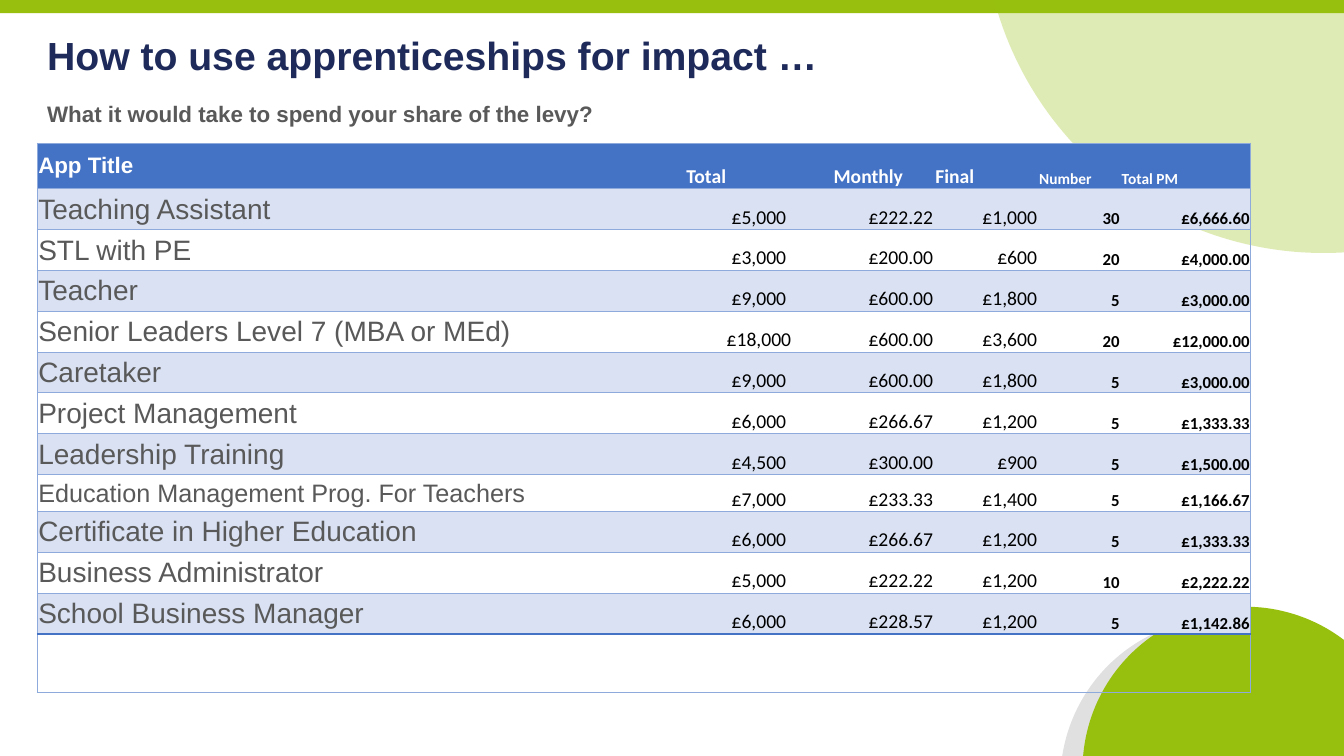
from dataclasses import dataclass
from typing import Optional

from lxml.etree import SubElement
from pptx import Presentation
from pptx.dml.color import RGBColor
from pptx.enum.shapes import MSO_SHAPE as Shape
from pptx.enum.text import MSO_ANCHOR as Anchor, PP_ALIGN as Align
from pptx.oxml.ns import qn
from pptx.util import Pt

LIME = RGBColor(0x97, 0xBF, 0x0D)
BAR_LIME = RGBColor(0x98, 0xBF, 0x0E)
NAVY = RGBColor(0x1E, 0x2A, 0x5A)
GREY = RGBColor(0x59, 0x59, 0x59)
BLUE = RGBColor(0x44, 0x72, 0xC4)
PALE_BLUE = RGBColor(0xD9, 0xE1, 0xF2)
RULE_BLUE = RGBColor(0x8E, 0xA9, 0xDB)
WHITE = RGBColor(0xFF, 0xFF, 0xFF)
BLACK = RGBColor(0, 0, 0)
NO_STYLE = "{2D5ABB26-0587-4C30-8999-92F81FD0307C}"


@dataclass
class Decoration:
    kind: Shape
    left: float
    top: float
    width: float
    height: float
    colour: RGBColor
    opacity: int = 100


@dataclass
class Heading:
    text: str
    top: float
    width: float
    height: float
    size: float
    colour: RGBColor


@dataclass
class CellStyle:
    size: float
    colour: RGBColor
    bold: bool = False
    font: str = "Calibri"
    align: Align = Align.LEFT
    anchor: Anchor = Anchor.BOTTOM


@dataclass
class Rule:
    colour: RGBColor
    width: float


THIN = Rule(RULE_BLUE, 0.5)
THICK = Rule(BLUE, 2)

CORNER_CIRCLES = [
    Decoration(Shape.OVAL, 757.4, 441.4, 232.6, 232.6, BLACK, 12),
    Decoration(Shape.OVAL, 773.3, 433.4, 232.6, 232.6, LIME),
]
TOP_SHAPES = [
    Decoration(Shape.RECTANGLE, 0, 0, 960, 9.4, BAR_LIME),
    Decoration(Shape.OVAL, 702, -306, 486.7, 486.7, LIME, 30),
]
HEADINGS = [
    Heading("How to use apprenticeships for impact …", 18.7, 585.4, 65.5, 28, NAVY),
    Heading("What it would take to spend your share of the levy?", 67.7, 519.8, 26.6, 16, GREY),
]

TITLES = ("App Title", "Total", "Monthly", "Final", "Number", "Total PM")
APPRENTICESHIPS = [
    ("Teaching Assistant", "£5,000", "£222.22", "£1,000", "30", "£6,666.60"),
    ("STL with PE", "£3,000", "£200.00", "£600", "20", "£4,000.00"),
    ("Teacher", "£9,000", "£600.00", "£1,800", "5", "£3,000.00"),
    ("Senior Leaders Level 7 (MBA or MEd)", "£18,000", "£600.00", "£3,600", "20", "£12,000.00"),
    ("Caretaker", "£9,000", "£600.00", "£1,800", "5", "£3,000.00"),
    ("Project Management", "£6,000", "£266.67", "£1,200", "5", "£1,333.33"),
    ("Leadership Training", "£4,500", "£300.00", "£900", "5", "£1,500.00"),
    ("Education Management Prog. For Teachers", "£7,000", "£233.33", "£1,400", "5", "£1,166.67"),
    ("Certificate in Higher Education", "£6,000", "£266.67", "£1,200", "5", "£1,333.33"),
    ("Business Administrator", "£5,000", "£222.22", "£1,200", "10", "£2,222.22"),
    ("School Business Manager", "£6,000", "£228.57", "£1,200", "5", "£1,142.86"),
]
LONG_ROW = 8
LAST_ROW = len(APPRENTICESHIPS)
COLUMN_WIDTHS = (463, 105.1, 72.7, 74.2, 59, 92.9)
ROW_HEIGHTS = [32.4] + [29.2] * LAST_ROW + [41.8]
ROW_HEIGHTS[LONG_ROW] = 26.2

TITLE_STYLES = (
    [CellStyle(16, WHITE, True, "Arial", anchor=Anchor.MIDDLE)]
    + [CellStyle(14, WHITE, True)] * 3
    + [CellStyle(11, WHITE, True)] * 2
)
BODY_STYLES = (
    [CellStyle(20, GREY, False, "Arial", anchor=Anchor.MIDDLE),
     CellStyle(14, BLACK, align=Align.CENTER)]
    + [CellStyle(14, BLACK, align=Align.RIGHT)] * 2
    + [CellStyle(12, BLACK, True, align=Align.RIGHT)] * 2
)
LONG_STYLES = [CellStyle(18, GREY, False, "Arial", anchor=Anchor.MIDDLE)] + BODY_STYLES[1:]


def draw_decoration(slide, item: Decoration) -> None:
    shape = slide.shapes.add_shape(
        item.kind, Pt(item.left), Pt(item.top), Pt(item.width), Pt(item.height))
    shape.shadow.inherit = False
    shape.line.fill.background()
    shape.fill.solid()
    shape.fill.fore_color.rgb = item.colour
    if item.opacity < 100:
        colour = shape.fill._xPr.find(qn("a:solidFill"))[0]
        SubElement(colour, qn("a:alpha"), val=str(item.opacity * 1000))


def format_font(font, name: str, size: float, colour: RGBColor, bold: bool) -> None:
    font.name, font.size, font.bold = name, Pt(size), bold
    font.color.rgb = colour


def draw_heading(slide, item: Heading) -> None:
    frame = slide.shapes.add_textbox(
        Pt(26.6), Pt(item.top), Pt(item.width), Pt(item.height)).text_frame
    frame.word_wrap = True
    frame.text = item.text
    format_font(frame.paragraphs[0].runs[0].font, "Arial", item.size, item.colour, True)


def rule_cell(cell, **sides: Optional[Rule]) -> None:
    properties = cell._tc.get_or_add_tcPr()
    for side in "LRTB":
        rule = sides.get(side)
        if rule:
            line = SubElement(properties, qn(f"a:ln{side}"), w=str(Pt(rule.width)))
            fill = SubElement(line, qn("a:solidFill"))
            SubElement(fill, qn("a:srgbClr"), val=str(rule.colour))


def write_cell(cell, text: str, style: CellStyle) -> None:
    cell.margin_left = cell.margin_right = cell.margin_top = Pt(0.75)
    cell.margin_bottom = Pt(0)
    cell.vertical_anchor = style.anchor
    cell.text_frame.text = text
    paragraph = cell.text_frame.paragraphs[0]
    paragraph.alignment = style.align
    format_font(paragraph.runs[0].font, style.font, style.size, style.colour, style.bold)


def draw_levy_table(slide) -> None:
    lines = [TITLES, *APPRENTICESHIPS, ("",) * len(TITLES)]
    frame = slide.shapes.add_table(
        len(lines), len(TITLES), Pt(26.6), Pt(102.2),
        Pt(sum(COLUMN_WIDTHS)), Pt(sum(ROW_HEIGHTS)))
    table = frame.table
    table._tbl.tblPr.find(qn("a:tableStyleId")).text = NO_STYLE
    for column, width in zip(table.columns, COLUMN_WIDTHS):
        column.width = Pt(width)
    for r, (line, height) in enumerate(zip(lines, ROW_HEIGHTS)):
        table.rows[r].height = Pt(height)
        styles = {0: TITLE_STYLES, LONG_ROW: LONG_STYLES}.get(r, BODY_STYLES)
        for c, text in enumerate(line):
            cell = table.cell(r, c)
            rule_cell(cell,
                      L=THIN if c == 0 else None,
                      R=THIN if c == len(line) - 1 else None,
                      T=THICK if r == LAST_ROW + 1 else THIN,
                      B=THICK if r == LAST_ROW else THIN)
            # Blue header, then pale bands on the odd rows
            if r == 0 or r % 2:
                cell.fill.solid()
                cell.fill.fore_color.rgb = PALE_BLUE if r else BLUE
            else:
                cell.fill.background()
            if r > LAST_ROW:
                continue
            write_cell(cell, text, styles[c])


def main() -> None:
    deck = Presentation()
    deck.slide_width, deck.slide_height = Pt(960), Pt(540)
    slide = deck.slides.add_slide(deck.slide_layouts[6])

    # Backdrop and headings
    for circle in CORNER_CIRCLES:
        draw_decoration(slide, circle)
    for heading in HEADINGS:
        draw_heading(slide, heading)
    for item in TOP_SHAPES:
        draw_decoration(slide, item)

    # Levy spending
    draw_levy_table(slide)
    deck.save("out.pptx")


if __name__ == "__main__":
    main()
